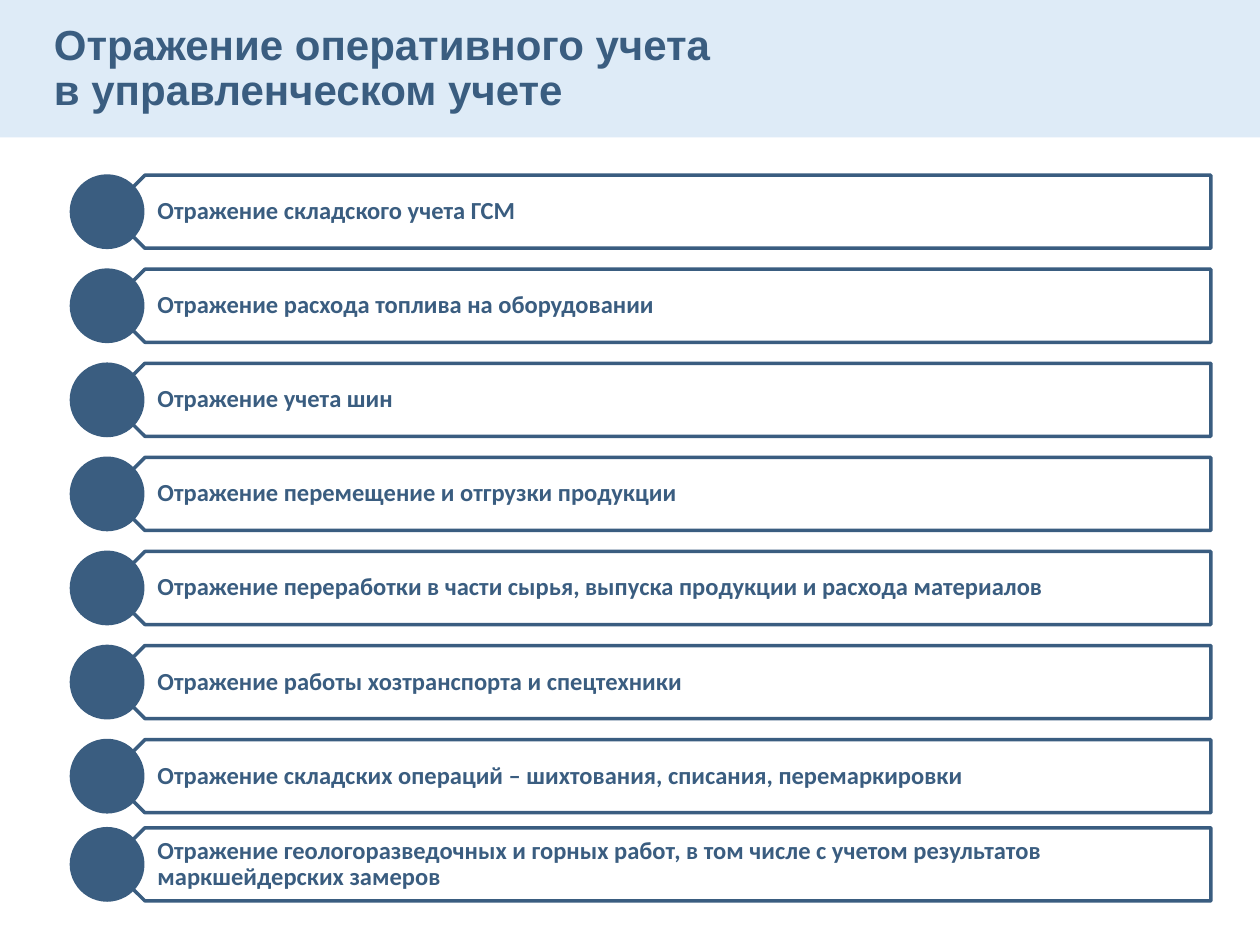
from dataclasses import dataclass

from pptx import Presentation
from pptx.dml.color import RGBColor
from pptx.enum.shapes import MSO_SHAPE
from pptx.enum.text import MSO_ANCHOR, PP_ALIGN
from pptx.util import Inches, Pt

RECTANGLE = MSO_SHAPE.RECTANGLE
PENTAGON = MSO_SHAPE.PENTAGON
OVAL = MSO_SHAPE.OVAL
MIDDLE = MSO_ANCHOR.MIDDLE
LEFT = PP_ALIGN.LEFT


@dataclass(frozen=True)
class Theme:
    accent: RGBColor = RGBColor(0x3A, 0x5D, 0x80)
    header: RGBColor = RGBColor(0xDE, 0xEB, 0xF7)
    white: RGBColor = RGBColor(0xFF, 0xFF, 0xFF)
    title_font: str = "Arial"
    body_font: str = "Calibri"
    title_size: Pt = Pt(24)
    body_size: Pt = Pt(14)


THEME = Theme()

TITLE = "Отражение оперативного учета\vв управленческом учете"
ITEMS = [
    "Отражение складского учета ГСМ",
    "Отражение расхода топлива на оборудовании",
    "Отражение учета шин",
    "Отражение перемещение и отгрузки продукции",
    "Отражение переработки в части сырья, выпуска продукции и расхода материалов",
    "Отражение работы хозтранспорта и спецтехники",
    "Отражение складских операций – шихтования, списания, перемаркировки",
    "Отражение геологоразведочных и горных работ, в том числе с учетом "
    "результатов маркшейдерских замеров",
]

ROW_HEIGHT = 0.58
FIRST_TOP = 1.39
ROW_PITCH = (5.87 - FIRST_TOP) / 6
LAST_TOP = 6.57  # the last row stands closer to the one above it


def set_attributes(target, values):
    for name, value in values.items():
        setattr(target, name, value)


def add_filled_shape(slide, kind, box, fill, line_width=None):
    shape = slide.shapes.add_shape(kind, *map(Inches, box))
    shape.shadow.inherit = False
    shape.fill.solid()
    shape.fill.fore_color.rgb = fill
    if line_width is None:
        shape.line.fill.background()
    else:
        shape.line.color.rgb = THEME.accent
        shape.line.width = Pt(line_width)
    return shape


def add_text(slide, text, box, font_name, size, insets):
    """Insets are left, top, right and bottom in inches."""
    frame = slide.shapes.add_textbox(*map(Inches, box)).text_frame
    left, top, right, bottom = map(Inches, insets)
    set_attributes(frame, {
        "word_wrap": True,
        "vertical_anchor": MIDDLE,
        "margin_left": left,
        "margin_top": top,
        "margin_right": right,
        "margin_bottom": bottom,
    })
    paragraph = frame.paragraphs[0]
    paragraph.text = text
    set_attributes(paragraph, {"alignment": LEFT, "line_spacing": 0.9})
    for run in paragraph.runs:
        set_attributes(run.font, {"name": font_name, "size": size, "bold": True})
        run.font.color.rgb = THEME.accent


def add_header(slide):
    add_filled_shape(slide, RECTANGLE, (0, 0, 10, 1.09), THEME.header)
    add_text(slide, TITLE, (0.33, 0.16, 6.06, 0.78),
             THEME.title_font, THEME.title_size, (0.1, 0.05, 0.1, 0.05))


def add_row(slide, text, top):
    banner = add_filled_shape(slide, PENTAGON, (0.86, top, 8.75, ROW_HEIGHT),
                              THEME.white, 2)
    banner.rotation = 180
    add_text(slide, text, (1, top, 8.6, ROW_HEIGHT),
             THEME.body_font, THEME.body_size, (0.25, 0.06, 0.11, 0.06))
    add_filled_shape(slide, OVAL, (0.56, top, ROW_HEIGHT, ROW_HEIGHT),
                     THEME.accent, 1)


def main():
    presentation = Presentation()
    presentation.slide_width = Inches(10)
    presentation.slide_height = Inches(7.5)
    slide = presentation.slides.add_slide(presentation.slide_layouts[6])
    add_header(slide)
    for index, text in enumerate(ITEMS[:-1]):
        add_row(slide, text, FIRST_TOP + index * ROW_PITCH)
    add_row(slide, ITEMS[-1], LAST_TOP)
    presentation.save("out.pptx")


if __name__ == "__main__":
    main()
